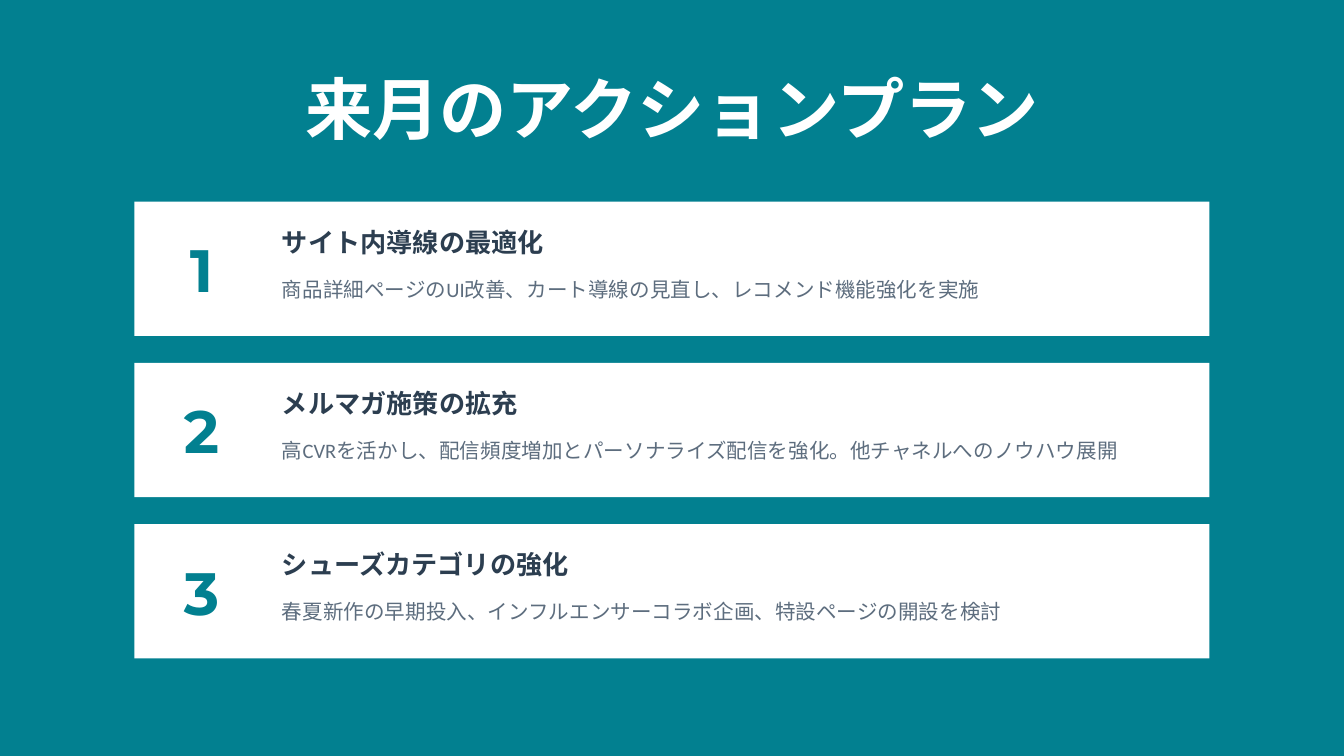
import dataclasses

import pptx
import pptx.dml.color
import pptx.enum.shapes
import pptx.enum.text
import pptx.util

Inches = pptx.util.Inches
Align = pptx.enum.text.PP_ALIGN


@dataclasses.dataclass(frozen=True)
class Theme:
    teal: str = "028090"
    white: str = "FFFFFF"
    heading: str = "2C3E50"
    detail: str = "5D6D7E"
    display_font: str = "Montserrat"
    heading_font: str = "Arial"
    detail_font: str = "Calibri"
    title_size: int = 36
    number_size: int = 32
    heading_size: int = 14
    detail_size: int = 11


theme = Theme()


def color(value):
    return pptx.dml.color.RGBColor.from_string(value)


def write_text(box, text, *, font, size, fill, bold=False, align=Align.LEFT):
    frame = box.text_frame
    frame.word_wrap = True
    frame.auto_size = pptx.enum.text.MSO_AUTO_SIZE.NONE
    frame.vertical_anchor = pptx.enum.text.MSO_ANCHOR.MIDDLE
    para = frame.paragraphs[0]
    para.alignment = align
    span = para.add_run()
    span.text = text
    span.font.name = font
    span.font.size = pptx.util.Pt(size)
    span.font.bold = bold
    span.font.color.rgb = color(fill)


# Page in 16:9 and background
deck = pptx.Presentation()
deck.slide_width, deck.slide_height = Inches(10), Inches(10 * 9 / 16)
page = deck.slides.add_slide(deck.slide_layouts[5])
page.background.fill.solid()
page.background.fill.fore_color.rgb = color(theme.teal)

# Title
title = page.shapes.title
title.left, title.top = Inches(0.5), Inches(0.5)
title.width, title.height = Inches(9), Inches(0.6)
write_text(title, "来月のアクションプラン", font=theme.display_font,
           size=theme.title_size, fill=theme.white, bold=True, align=Align.CENTER)

# Action cards
actions = [
    ("サイト内導線の最適化",
     "商品詳細ページのUI改善、カート導線の見直し、レコメンド機能強化を実施"),
    ("メルマガ施策の拡充",
     "高CVRを活かし、配信頻度増加とパーソナライズ配信を強化。他チャネルへのノウハウ展開"),
    ("シューズカテゴリの強化",
     "春夏新作の早期投入、インフルエンサーコラボ企画、特設ページの開設を検討"),
]
first_top, card_step = 1.5, 1.2

for index, (heading, detail) in enumerate(actions):
    top = first_top + index * card_step

    card = page.shapes.add_shape(pptx.enum.shapes.MSO_SHAPE.RECTANGLE,
                                 Inches(1), Inches(top), Inches(8), Inches(1))
    card.shadow.inherit = False
    card.fill.solid()
    card.fill.fore_color.rgb = color(theme.white)
    card.line.fill.background()

    number_box = page.shapes.add_textbox(Inches(1.2), Inches(top + 0.2),
                                         Inches(0.6), Inches(0.6))
    write_text(number_box, str(index + 1), font=theme.display_font,
               size=theme.number_size, fill=theme.teal, bold=True, align=Align.CENTER)

    heading_box = page.shapes.add_textbox(Inches(2), Inches(top + 0.15),
                                          Inches(6.8), Inches(0.3))
    write_text(heading_box, heading, font=theme.heading_font,
               size=theme.heading_size, fill=theme.heading, bold=True)

    detail_box = page.shapes.add_textbox(Inches(2), Inches(top + 0.45),
                                         Inches(6.8), Inches(0.4))
    write_text(detail_box, detail, font=theme.detail_font,
               size=theme.detail_size, fill=theme.detail)

deck.save("out.pptx")
